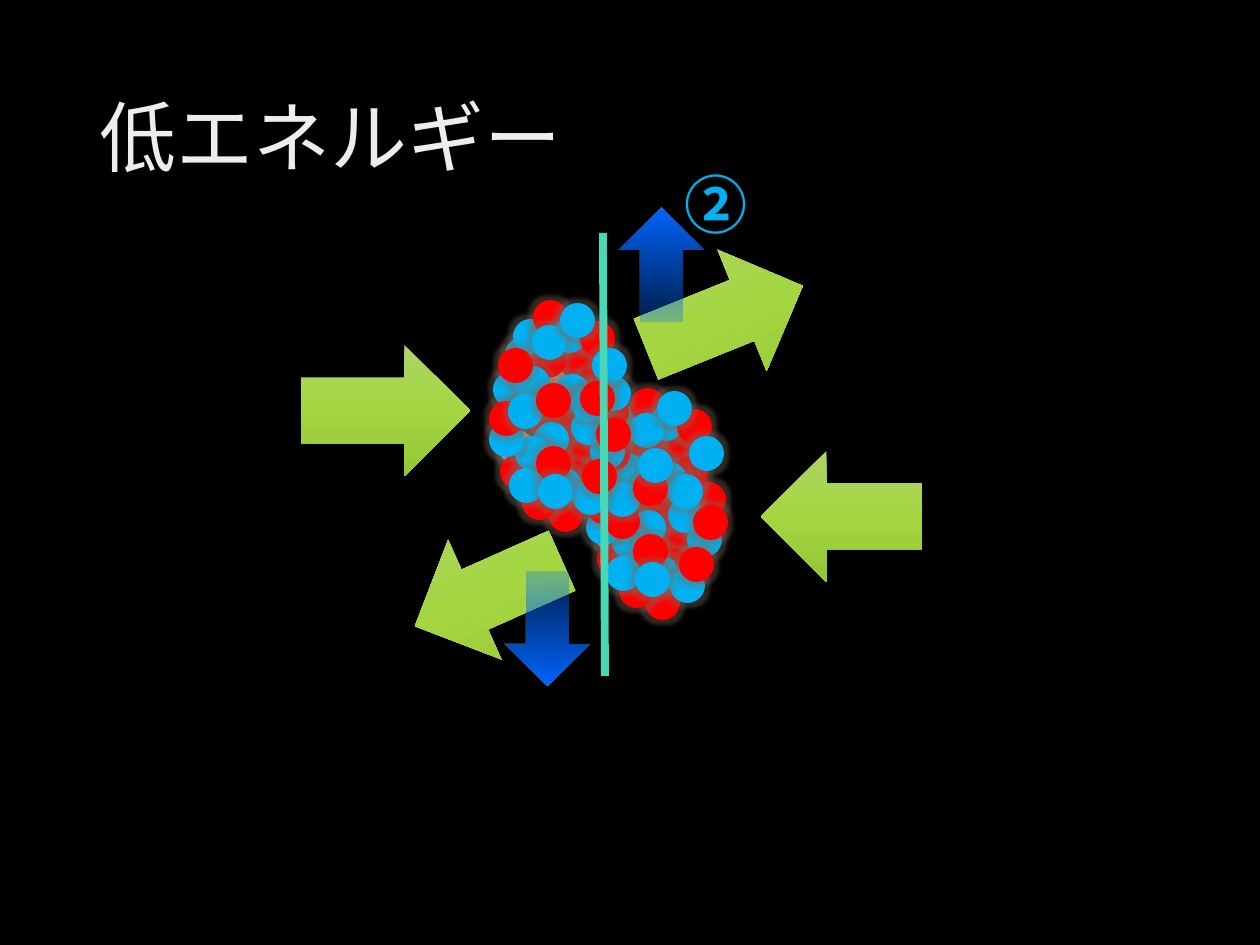
from lxml import etree
from pptx import Presentation
from pptx.dml.color import RGBColor
from pptx.enum.shapes import MSO_CONNECTOR, MSO_SHAPE as SHAPE
from pptx.enum.text import MSO_ANCHOR, MSO_AUTO_SIZE
from pptx.oxml import parse_xml
from pptx.oxml.ns import nsdecls, qn
from pptx.util import Emu, Pt

PX = 914400 // 126
COLORS = {"ground": "000000", "R": "FF0000", "B": "00B0F0", "G": "D9D9D9",
          "axis": "48D8B5", "number": "00B0F0", "glow": "7F6B5D"}
# Gradient stops: position %, colour, opacity %
BEAM_STOPS = [(0, "ACD564", 100), (50, "A4D642", 100), (100, "94C533", 100)]
FORCE_STOPS = [(0, "0066FF", 28), (100, "0066FF", 100)]
TITLE_STOPS = [(0, "BFBFBF", 100), (28, "EDEDED", 100), (100, "FFFFFF", 100)]

# Nucleons from back to front: kind and left, top inside the nucleus.
# A fourth entry names the only nucleus that holds the nucleon.
BALL = 35
NUCLEONS = [
    ("R", 14, 67), ("R", 37, 102), ("R", 73, 134), ("G", 49, 67), ("G", 89, 105),
    ("B", 101, 134), ("R", 105, 94), ("R", 62, 105), ("R", 67, 160), ("B", 16, 37),
    ("B", 82, 110), ("G", 52, 25), ("R", 71, 45), ("R", 87, 68), ("R", 107, 117),
    ("B", 4, 72), ("G", 10, 130), ("R", 59, 197), ("R", 42, 43), ("R", 11, 154),
    ("B", 45, 122), ("B", 26, 136), ("B", 26, 66), ("B", 24, 19), ("B", 0, 122),
    ("B", 107, 76, "left"), ("R", 33, 185), ("R", 9, 48), ("R", 44, 0),
    ("B", 58, 168), ("B", 84, 180), ("B", 63, 18), ("R", 91, 21), ("R", 93, 159),
    ("R", 0, 101), ("B", 103, 48), ("B", 20, 168), ("B", 66, 74),
    ("R", 19, 116, "right"), ("R", 47, 146), ("B", 19, 94), ("B", 49, 174),
    ("B", 82, 86), ("R", 47, 83), ("R", 91, 81, "left"), ("B", 43, 25),
    ("B", 71, 3), ("B", 52, 60, "right"),
]


def px(*lengths):
    return [Emu(length * PX) for length in lengths]


def rgb(name):
    return RGBColor.from_string(COLORS[name])


def set_gradient(fill, props, stops, angle):
    """Fill with a linear gradient; the angle runs clockwise."""
    fill.gradient()
    fill.gradient_angle = 360 - angle
    stop_list = props.find(qn("a:gradFill")).find(qn("a:gsLst"))
    for old in list(stop_list):
        stop_list.remove(old)
    for position, color, opacity in stops:
        stop = etree.SubElement(stop_list, qn("a:gs"), pos=str(position * 1000))
        shade = etree.SubElement(stop, qn("a:srgbClr"), val=color)
        if opacity < 100:
            etree.SubElement(shade, qn("a:alpha"), val=str(opacity * 1000))


def set_effect(shape, inner):
    for old in shape._element.spPr.findall(qn("a:effectLst")):
        shape._element.spPr.remove(old)
    shape._element.spPr.append(
        parse_xml(f'<a:effectLst {nsdecls("a")}>{inner}</a:effectLst>'))


def add_arrow(shapes, kind, box, stops, flip=None, rotation=0):
    arrow = shapes.add_shape(kind, *px(*box))
    arrow.shadow.inherit = False
    arrow.line.fill.background()
    set_gradient(arrow.fill, arrow._element.spPr, stops, 90)
    arrow.rotation = rotation
    if flip:
        arrow._element.spPr.find(qn("a:xfrm")).set(flip, "1")
    return arrow


def add_beam(page, box, flip=None, rotation=0):
    beam = add_arrow(page.shapes, SHAPE.RIGHT_ARROW, box, BEAM_STOPS, flip, rotation)
    set_effect(beam, '<a:outerShdw blurRad="57150" dist="19050" dir="5400000" '
                     'algn="ctr" rotWithShape="0"><a:srgbClr val="000000">'
                     '<a:alpha val="63000"/></a:srgbClr></a:outerShdw>')


def add_nucleus(page, left, top, side):
    for kind, x, y, *only in NUCLEONS:
        if only and side not in only:
            continue
        ball = page.shapes.add_shape(
            SHAPE.OVAL, *px(left + x, top + y, BALL, BALL))
        ball.fill.solid()
        ball.fill.fore_color.rgb = rgb(kind)
        ball.line.fill.background()
        set_effect(ball, f'<a:glow rad="63500"><a:srgbClr val="{COLORS["glow"]}">'
                         '<a:alpha val="40000"/></a:srgbClr></a:glow>')


def add_title(page, box, text):
    title = page.shapes.title
    title.left, title.top, title.width, title.height = px(*box)
    frame = title.text_frame
    frame.text = text
    frame.vertical_anchor = MSO_ANCHOR.MIDDLE
    para = frame.paragraphs[0]
    para.line_spacing = 0.9
    para.alignment = 1
    span = para.runs[0]
    span.font.size = Pt(44)
    span.font.name = "Calibri"
    set_gradient(span.font.fill, span._r.get_or_add_rPr(), TITLE_STOPS, 80)


def add_axis(page, start, end):
    axis = page.shapes.add_connector(MSO_CONNECTOR.STRAIGHT, *px(*start, *end))
    axis.line.color.rgb = rgb("axis")
    axis.line.width = Pt(4.5)
    set_effect(axis, "")


def add_forces(page):
    group = page.shapes.add_group_shape()
    # Number of the force
    label = group.shapes.add_textbox(*px(672, 159, 89, 89))
    frame = label.text_frame
    frame.word_wrap = False
    frame.auto_size = MSO_AUTO_SIZE.SHAPE_TO_FIT_TEXT
    frame.text = "②"
    span = frame.paragraphs[0].runs[0]
    span.font.size = Pt(36)
    span.font.bold = True
    span.font.name = "Noto Sans CJK JP"
    span.font.color.rgb = rgb("number")
    etree.SubElement(span._r.get_or_add_rPr(), qn("a:ea"), typeface="Noto Sans CJK JP")
    # Opposite forces
    add_arrow(group.shapes, SHAPE.DOWN_ARROW, (619, 208, 84, 114), FORCE_STOPS, "flipV")
    add_arrow(group.shapes, SHAPE.DOWN_ARROW, (505, 572, 84, 114), FORCE_STOPS)


def main():
    deck = Presentation()
    deck.slide_width, deck.slide_height = px(1260, 945)
    page = deck.slides.add_slide(deck.slide_layouts[5])
    page.background.fill.solid()
    page.background.fill.fore_color.rgb = rgb("ground")

    add_title(page, (87, 50, 1086, 183), "低エネルギー")
    # Outgoing beams
    add_beam(page, (640, 252, 169, 131), rotation=338)
    add_beam(page, (408, 528, 161, 131), "flipH", 336)
    # Colliding nuclei
    add_nucleus(page, 586, 388, "right")
    add_nucleus(page, 489, 300, "left")
    add_axis(page, (603, 233), (605, 676))
    add_forces(page)
    # Incoming beams
    add_beam(page, (301, 345, 169, 131))
    add_beam(page, (761, 451, 161, 131), "flipH")
    deck.save("out.pptx")


if __name__ == "__main__":
    main()
